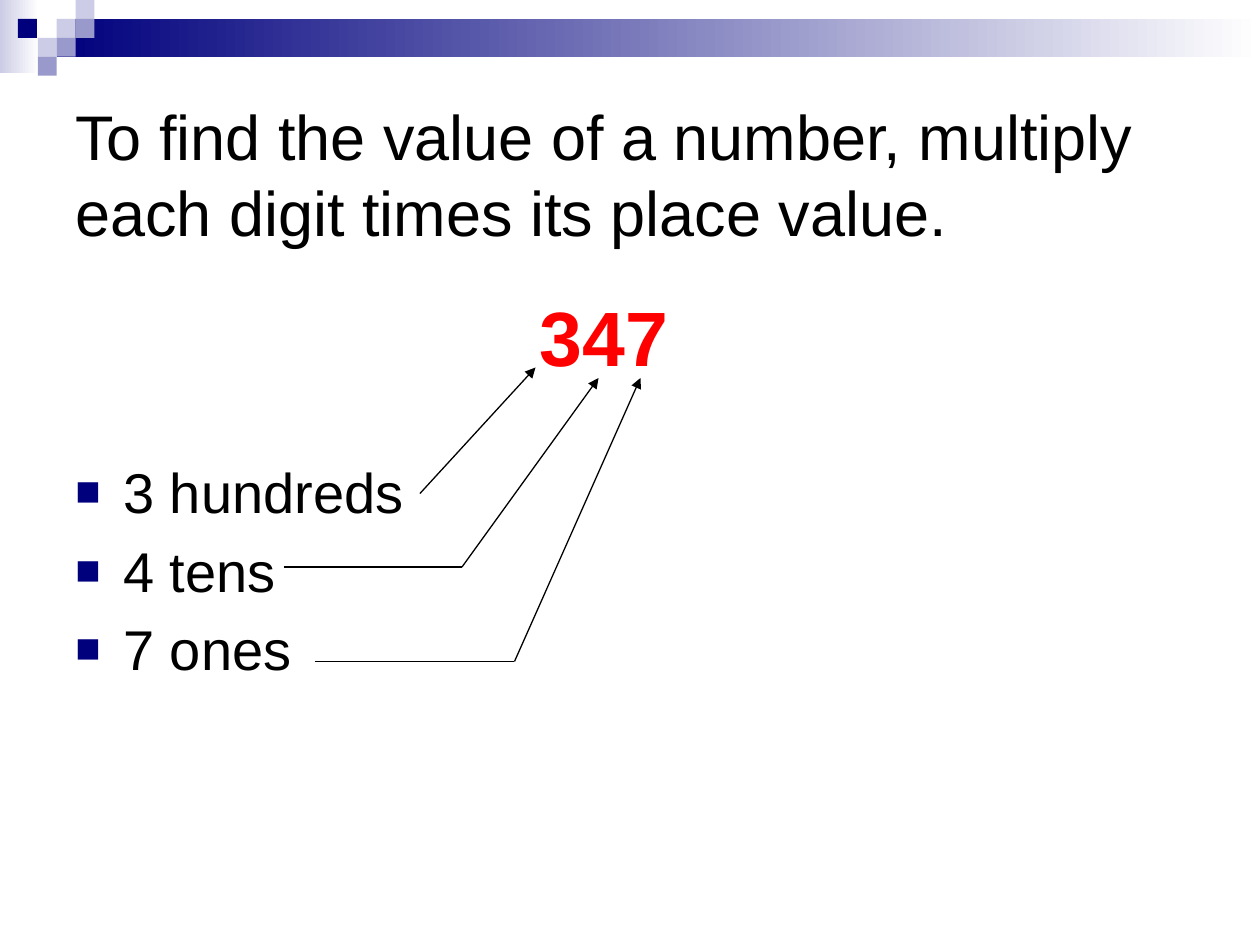
"""Build a slide that shows how each digit of 347 takes its place value."""
from dataclasses import dataclass, field
from typing import Any

from lxml.etree import SubElement as Sub
from pptx import Presentation
from pptx.dml.color import RGBColor as Rgb
from pptx.enum.shapes import MSO_CONNECTOR as Link, MSO_SHAPE as Form
from pptx.enum.text import MSO_ANCHOR as Anchor, MSO_AUTO_SIZE as Fit, PP_ALIGN as Align
from pptx.oxml.ns import qn
from pptx.util import Inches, Pt

HUES = {"navy": "00007D", "lilac": "CCCCE6", "mauve": "9999CC",
        "white": "FFFFFF", "black": "000000", "red": "FF0000"}
WIDE, HIGH = Inches(10), Inches(7.5)
COLS, ROWS = 120, 90
TILE = 1.8


@dataclass
class Block:
    box: tuple[float, float, float, float]
    hues: tuple[str, ...]


@dataclass
class Note:
    box: tuple[float, float, float, float]
    lines: tuple[str, ...]
    font: dict[str, Any]
    hue: str = "black"
    frame: dict[str, Any] = field(default_factory=dict)
    para: dict[str, Any] = field(default_factory=dict)
    gap: int = 0
    mark: str = ""


@dataclass
class Route:
    stops: tuple[tuple[float, float], ...]


def tint(name: str) -> Rgb:
    return Rgb.from_string(HUES[name])


def apply(item: Any, form: dict[str, Any]) -> None:
    for key, value in form.items():
        setattr(item, key, value)


def place(*spots: float) -> list[int]:
    return [round(spot * (HIGH / ROWS if i % 2 else WIDE / COLS))
            for i, spot in enumerate(spots)]


def tile(col: float, row: float, hue: str) -> Block:
    return Block((col * TILE, row * TILE, TILE, TILE), (hue,))


def draw_block(slide: Any, block: Block) -> None:
    shape = slide.shapes.add_shape(Form.RECTANGLE, *place(*block.box))
    shape.shadow.inherit = False
    shape.line.fill.background()
    if len(block.hues) == 1:
        shape.fill.solid()
        shape.fill.fore_color.rgb = tint(block.hues[0])
        return
    shape.fill.gradient()
    shape.fill.gradient_angle = 0
    for stop, hue in zip(shape.fill.gradient_stops, block.hues):
        stop.color.rgb = tint(hue)


def add_tag(root: Any, tag: str, **attrs: str) -> Any:
    return Sub(root, qn(f"a:{tag}"), attrs)


def style_para(props: Any, note: Note) -> None:
    if note.gap:
        add_tag(add_tag(props, "spcBef"), "spcPct", val=str(note.gap * 1000))
    if note.mark:
        apply_ind = {"marL": Inches(0.38), "indent": -Inches(0.38)}
        for key, value in apply_ind.items():
            props.set(key, str(value))
        add_tag(add_tag(props, "buClr"), "srgbClr", val=HUES["navy"])
        add_tag(props, "buSzPct", val="75000")
        add_tag(props, "buFont", typeface="Arial")
        add_tag(props, "buChar", char=note.mark)


def draw_note(slide: Any, note: Note) -> None:
    frame = slide.shapes.add_textbox(*place(*note.box)).text_frame
    apply(frame, {"word_wrap": True, **note.frame})
    for i, line in enumerate(note.lines):
        para = frame.add_paragraph() if i else frame.paragraphs[0]
        apply(para, note.para)
        style_para(para._p.get_or_add_pPr(), note)
        run = para.add_run()
        run.text = line
        apply(run.font, {"name": "Arial", **note.font})
        run.font.color.rgb = tint(note.hue)


def draw_route(slide: Any, route: Route) -> None:
    pairs = list(zip(route.stops, route.stops[1:]))
    for i, (start, end) in enumerate(pairs, 1):
        link = slide.shapes.add_connector(Link.STRAIGHT, *place(*start, *end))
        link.line.width = Pt(0.75)
        link.line.color.rgb = tint("black")
        if i == len(pairs):
            add_tag(link.line._get_or_add_ln(), "tailEnd", type="triangle")
        add_tag(link._element.spPr, "effectLst")


BLOCKS = [
    Block((0, 0, 3.7, 7), ("lilac", "white")),
    Block((3 * TILE, TILE, COLS - 3 * TILE, 2 * TILE), ("navy", "white")),
    tile(3, 1, "lilac"), tile(4, 0, "lilac"), tile(4, 1, "mauve"),
    tile(2, 2, "lilac"), tile(0.95, 1, "navy"), tile(3, 2, "mauve"),
    tile(2, 3, "mauve"),
]
NOTES = [
    Note((6, 6, 108, 21),
         ("To find the value of a number, multiply each digit times its place value.",),
         {"size": Pt(36)}, frame={"vertical_anchor": Anchor.MIDDLE}),
    Note((6, 43, 108, 34), ("3 hundreds", "4 tens", "7 ones"),
         {"size": Pt(32)}, gap=20, mark="■"),
    Note((32, 27, 51, 10), ("347",), {"size": Pt(44), "bold": True}, "red",
         {"auto_size": Fit.SHAPE_TO_FIT_TEXT}, {"alignment": Align.CENTER}, 50),
]
ROUTES = [
    Route(((40, 47), (51, 35))),
    Route(((27, 54), (44, 54), (57, 36))),
    Route(((30, 63), (49, 63), (61, 36))),
]


def main() -> None:
    deck = Presentation()
    apply(deck, {"slide_width": WIDE, "slide_height": HIGH})
    slide = deck.slides.add_slide(deck.slide_layouts[6])
    for items, draw in ((BLOCKS, draw_block), (NOTES, draw_note), (ROUTES, draw_route)):
        for item in items:
            draw(slide, item)
    deck.save("out.pptx")


if __name__ == "__main__":
    main()
